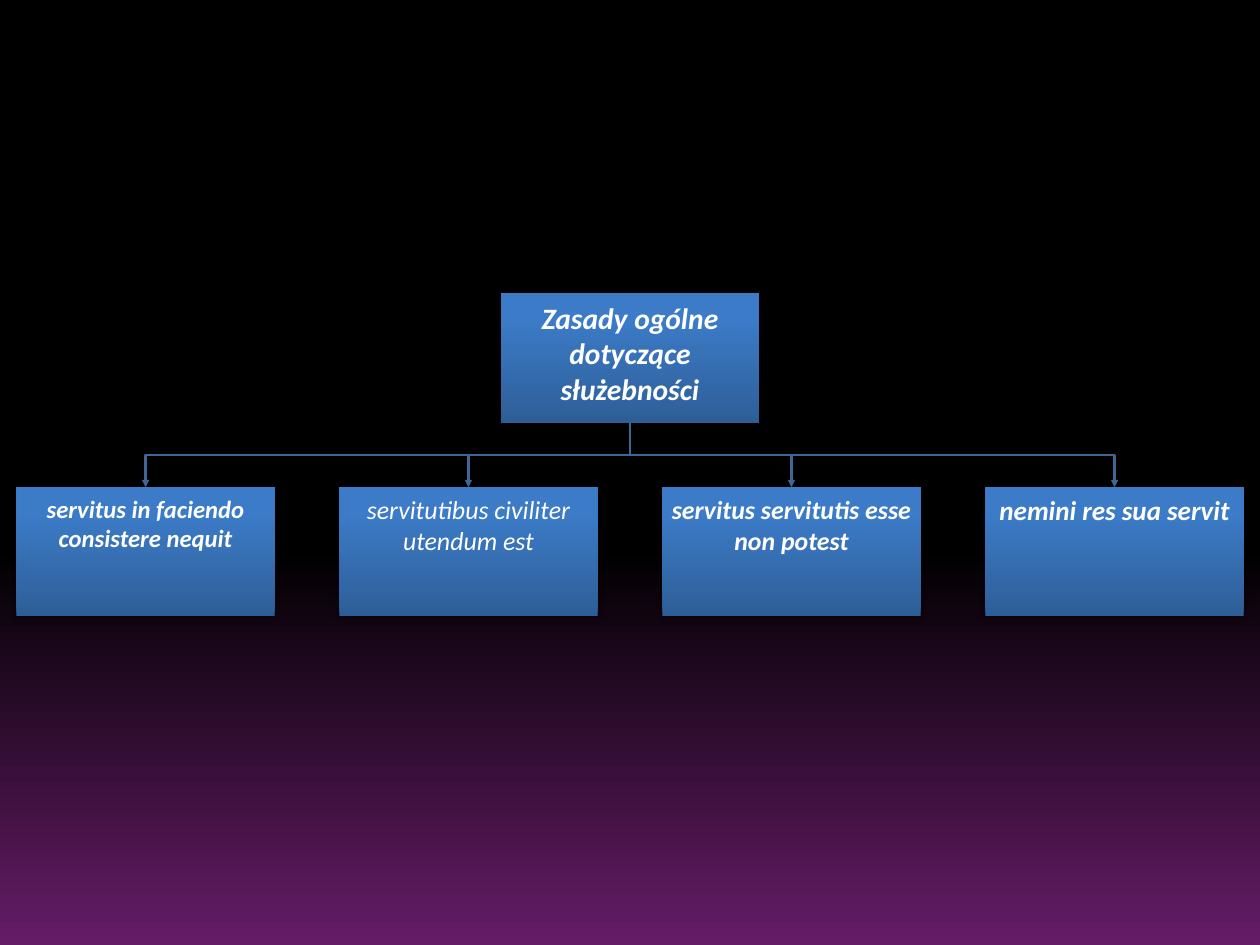
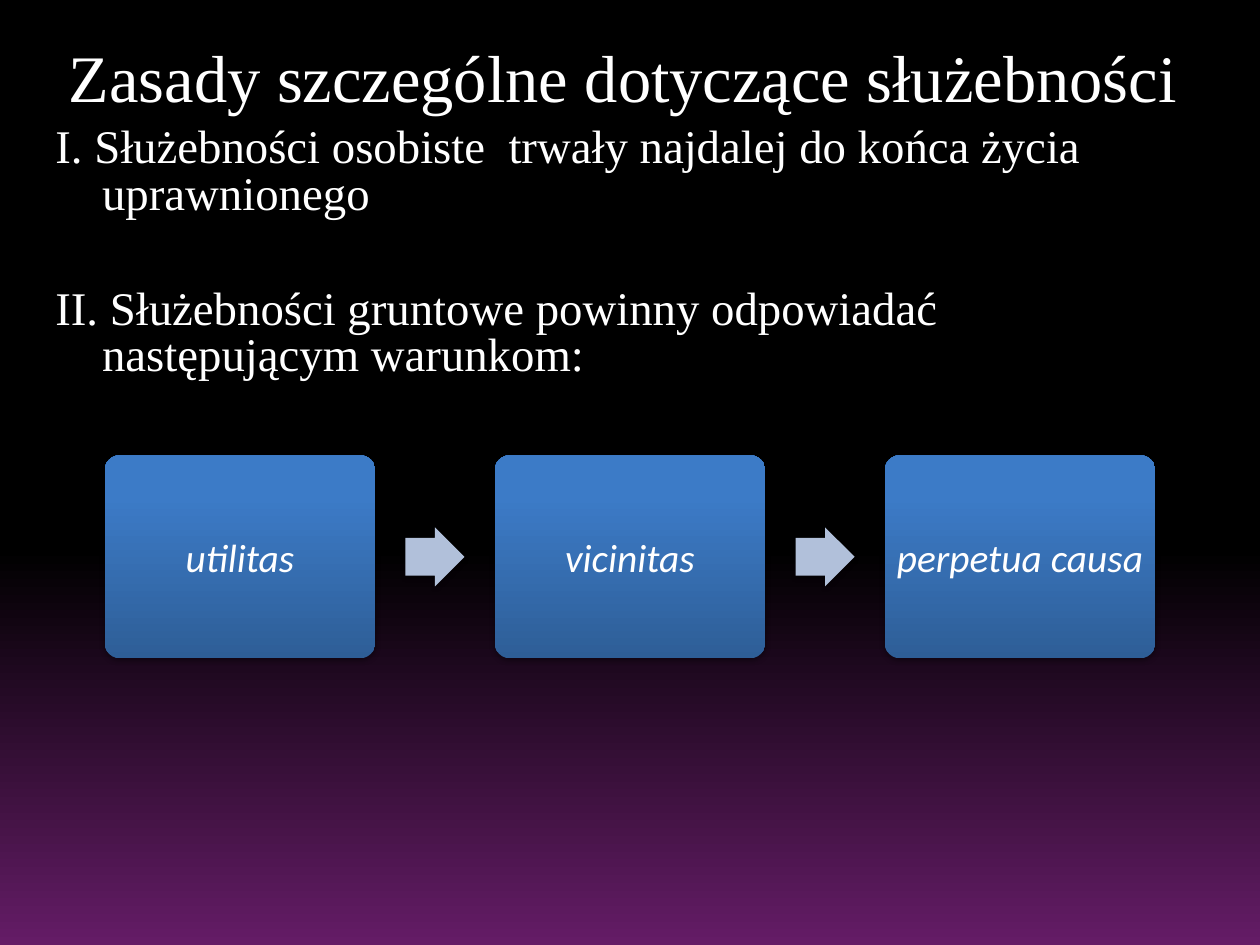
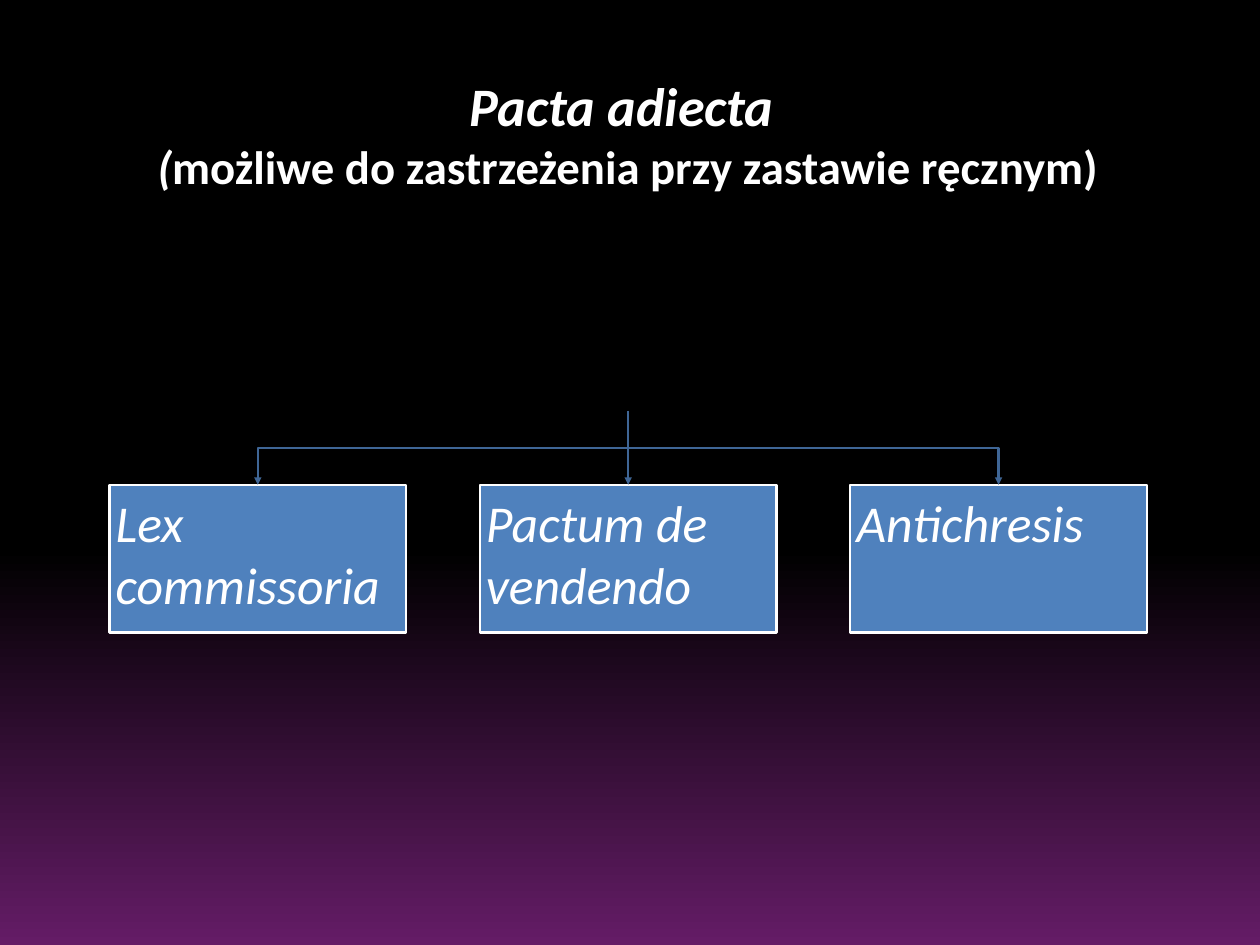
import pptx
import pptx.dml.color
import pptx.enum.dml
import pptx.enum.shapes
import pptx.enum.text
import pptx.oxml
import pptx.oxml.ns
import pptx.util
from lxml import etree

Pt = pptx.util.Pt
RGBColor = pptx.dml.color.RGBColor
MSO_SHAPE = pptx.enum.shapes.MSO_SHAPE
MSO_ANCHOR = pptx.enum.text.MSO_ANCHOR
PP_ALIGN = pptx.enum.text.PP_ALIGN
qn = pptx.oxml.ns.qn

WHITE = RGBColor(0xFF, 0xFF, 0xFF)
BLACK = RGBColor(0x00, 0x00, 0x00)
PURPLE = RGBColor(0x64, 0x1C, 0x66)
DARK_BLUE = RGBColor(0x2E, 0x5E, 0x97)
BRIGHT_BLUE = RGBColor(0x3C, 0x7B, 0xC7)
FLAT_BLUE = RGBColor(0x4F, 0x81, 0xBD)
LINE_BLUE = RGBColor(0x3F, 0x66, 0x96)
ARROW_BLUE = RGBColor(0xB1, 0xC0, 0xDA)

SANS = "Calibri"
SERIF = "Times New Roman"
SLIDE_WIDTH, SLIDE_HEIGHT = 1024, 768
CENTER = SLIDE_WIDTH / 2
INSET = 5

SHADOW = (
    '<a:outerShdw xmlns:a="http://schemas.openxmlformats.org/drawingml/2006/main" '
    'blurRad="50800" dist="25400" dir="5400000" rotWithShape="0">'
    '<a:srgbClr val="000000"><a:alpha val="35000"/></a:srgbClr></a:outerShdw>'
)


def fill_gradient(fill, angle, stops):
    fill.gradient()
    fill.gradient_angle = angle
    for stop, (position, color) in zip(fill.gradient_stops, stops):
        stop.position = position
        stop.color.rgb = color


def fill_blue_gradient(shape):
    fill_gradient(shape.fill, 90, [(0, DARK_BLUE), (0.8, BRIGHT_BLUE)])


def add_shadow(shape):
    effects = shape._element.spPr.find(qn("a:effectLst"))
    effects.append(pptx.oxml.parse_xml(SHADOW))


def format_runs(paragraph, size, font=SANS, bold=False, italic=False):
    for run in paragraph.runs:
        run.font.size = Pt(size)
        run.font.name = font
        run.font.bold = bold
        run.font.italic = italic
        run.font.color.rgb = WHITE


def prepare_frame(text_frame, anchor=MSO_ANCHOR.TOP):
    text_frame.word_wrap = True
    text_frame.vertical_anchor = anchor
    text_frame.margin_left = text_frame.margin_right = Pt(INSET)
    text_frame.margin_top = text_frame.margin_bottom = Pt(INSET)
    return text_frame


def add_text_box(slide, left, top, width, height):
    box = slide.shapes.add_textbox(Pt(left), Pt(top), Pt(width), Pt(height))
    return prepare_frame(box.text_frame)


def add_plain_shape(slide, kind, left, top, width, height):
    shape = slide.shapes.add_shape(kind, Pt(left), Pt(top), Pt(width), Pt(height))
    shape.shadow.inherit = False
    shape.line.fill.background()
    return shape


def add_box(slide, kind, center, top, width, height, text, size,
            bold=False, align=PP_ALIGN.CENTER, anchor=MSO_ANCHOR.TOP):
    box = add_plain_shape(slide, kind, center - width / 2, top, width, height)
    text_frame = prepare_frame(box.text_frame, anchor)
    text_frame.text = text
    paragraph = text_frame.paragraphs[0]
    paragraph.alignment = align
    format_runs(paragraph, size, bold=bold, italic=True)
    return box


def style_arrow(arrow):
    arrow.line.color.rgb = LINE_BLUE
    arrow.line.width = Pt(2)
    properties = arrow._element.spPr
    etree.SubElement(properties.find(qn("a:ln")), qn("a:tailEnd"), type="triangle")
    if properties.find(qn("a:effectLst")) is None:
        etree.SubElement(properties, qn("a:effectLst"))


def add_elbow_arrow(slide, start, top, end, bottom):
    middle = (top + bottom) / 2
    builder = slide.shapes.build_freeform(Pt(start), Pt(top))
    corners = [(start, middle), (end, middle), (end, bottom)]
    builder.add_line_segments([(Pt(x), Pt(y)) for x, y in corners], close=False)
    arrow = builder.convert_to_shape()
    arrow.fill.background()
    arrow.shadow.inherit = False
    style_arrow(arrow)


def add_straight_arrow(slide, start, top, box):
    arrow = slide.shapes.add_connector(
        pptx.enum.shapes.MSO_CONNECTOR.STRAIGHT, Pt(start), Pt(top), Pt(start), box.top)
    arrow.end_connect(box, 0)
    style_arrow(arrow)


def spread(center, step, count):
    return [center + (index - (count - 1) / 2) * step for index in range(count)]


def build_general_rules(slide):
    width, height, root_top, rule_top = 210, 105, 238.5, 396
    root = add_box(slide, MSO_SHAPE.RECTANGLE, CENTER, root_top, width, height,
                   "Zasady ogólne dotyczące służebności", 24, bold=True)
    fill_blue_gradient(root)
    add_shadow(root)
    rules = [
        ("servitus in faciendo consistere nequit", 20, True),
        ("servitutibus civiliter utendum est", 21, False),
        ("servitus servitutis esse non potest", 21, True),
        ("nemini res sua servit", 22, True),
    ]
    for center, (text, size, bold) in zip(spread(CENTER, 262.5, len(rules)), rules):
        box = add_box(slide, MSO_SHAPE.RECTANGLE, center, rule_top, width, height,
                      text, size, bold=bold)
        fill_blue_gradient(box)
        add_shadow(box)
        add_elbow_arrow(slide, CENTER, root_top + height, center, rule_top)


def build_special_rules(slide):
    text_frame = add_text_box(slide, 40, 35, 933, 300)
    text_frame.text = "\n".join([
        "Zasady szczególne dotyczące służebności",
        "I. Służebności osobiste  trwały najdalej do końca życia uprawnionego",
        "II. Służebności gruntowe powinny odpowiadać następującym warunkom:",
    ])
    title, *rules = text_frame.paragraphs
    title.alignment = PP_ALIGN.CENTER
    title.line_spacing = 0.83
    format_runs(title, 54, SERIF)
    for paragraph, space in zip(rules, (9, 55.5)):
        properties = paragraph._p.get_or_add_pPr()
        properties.set("marL", str(Pt(38)))
        properties.set("indent", str(-Pt(38)))
        paragraph.line_spacing = 0.83
        paragraph.space_before = Pt(space)
        format_runs(paragraph, 38, SERIF)

    top, height, step, arrow_size = 370, 165, 317, 48
    conditions = ["utilitas", "vicinitas", "perpetua causa"]
    for center, text in zip(spread(CENTER, step, len(conditions)), conditions):
        box = add_box(slide, MSO_SHAPE.ROUNDED_RECTANGLE, center, top, 220, height,
                      text, 32, anchor=MSO_ANCHOR.MIDDLE)
        box.adjustments[0] = 0.075
        fill_blue_gradient(box)
        add_shadow(box)
    for center in spread(CENTER, step, len(conditions) - 1):
        arrow = add_plain_shape(slide, MSO_SHAPE.RIGHT_ARROW, center - arrow_size / 2,
                                top + (height - arrow_size) / 2, arrow_size, arrow_size)
        arrow.adjustments[0] = 0.64
        arrow.adjustments[1] = 0.5
        arrow.fill.solid()
        arrow.fill.fore_color.rgb = ARROW_BLUE
        add_shadow(arrow)


def build_pledge_pacts(slide):
    text_frame = add_text_box(slide, 44, 54, 933, 120)
    text_frame.text = "Pacta adiecta \n("
    title, subtitle = text_frame.paragraphs
    subtitle.add_run().text = "możliwe do zastrzeżenia przy zastawie ręcznym)"
    for paragraph, size in ((title, 44), (subtitle, 38)):
        paragraph.alignment = PP_ALIGN.CENTER
        format_runs(paragraph, size, bold=True, italic=True)
    subtitle.runs[1].font.italic = False

    middle, stem_top, top = 510.5, 334, 394
    pacts = ["Lex commissoria", "Pactum de vendendo", "Antichresis"]
    for center, text in zip(spread(middle, 301, len(pacts)), pacts):
        box = add_box(slide, MSO_SHAPE.RECTANGLE, center, top, 241, 120, text, 42,
                      align=PP_ALIGN.LEFT)
        box.fill.solid()
        box.fill.fore_color.rgb = FLAT_BLUE
        box.line.color.rgb = WHITE
        box.line.width = Pt(2)
        if center == middle:
            add_straight_arrow(slide, middle, stem_top, box)
        else:
            add_elbow_arrow(slide, middle, stem_top, center, top)


def main():
    presentation = pptx.Presentation()
    presentation.slide_width = Pt(SLIDE_WIDTH)
    presentation.slide_height = Pt(SLIDE_HEIGHT)
    fill_gradient(presentation.slide_master.background.fill, 270,
                  [(0.58, BLACK), (1, PURPLE)])
    blank = presentation.slide_layouts[6]
    for build in (build_general_rules, build_special_rules, build_pledge_pacts):
        build(presentation.slides.add_slide(blank))
    presentation.save("out.pptx")


if __name__ == "__main__":
    main()
